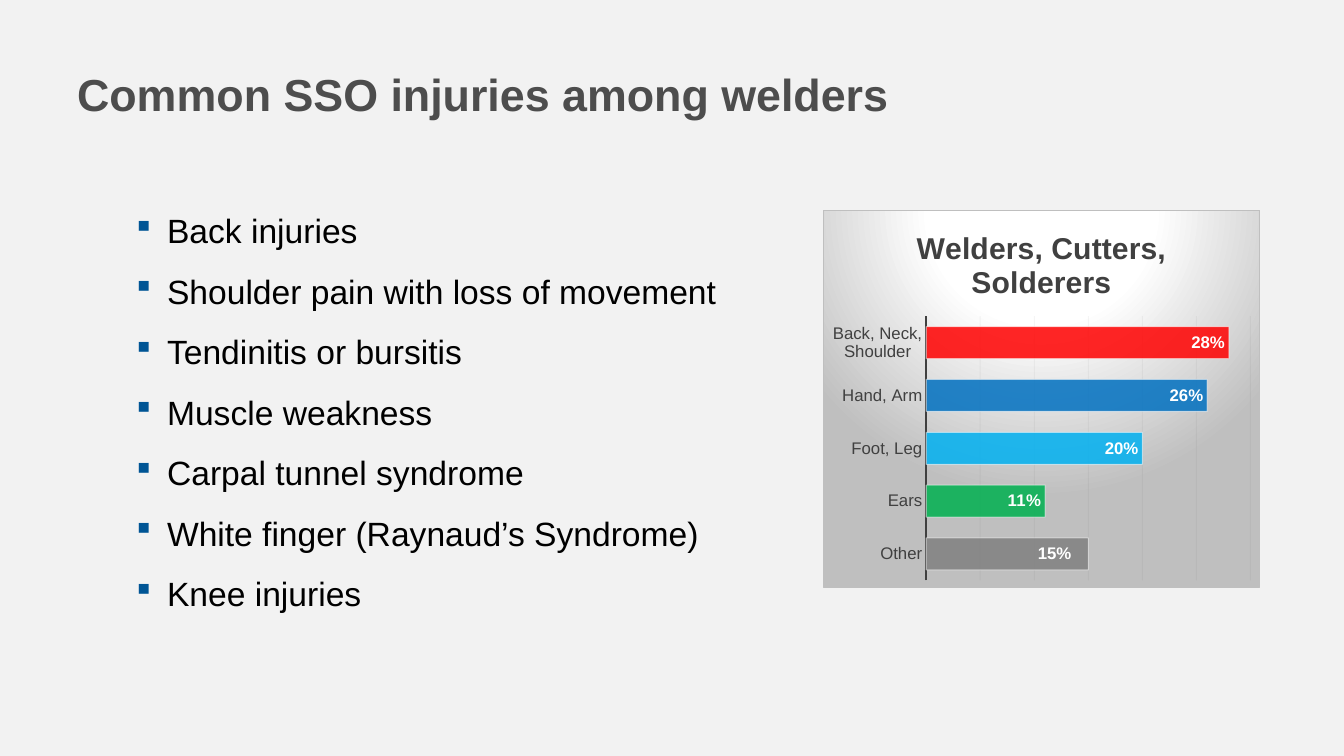
from lxml.etree import SubElement
from pptx import Presentation
from pptx.chart.data import CategoryChartData
from pptx.dml.color import RGBColor
from pptx.enum.chart import XL_CHART_TYPE as ChartType, XL_LABEL_POSITION as LabelPosition
from pptx.enum.chart import XL_TICK_MARK as TickMark
from pptx.enum.shapes import MSO_SHAPE
from pptx.enum.text import MSO_ANCHOR, MSO_AUTO_SIZE, PP_ALIGN
from pptx.oxml import parse_xml
from pptx.oxml.ns import nsdecls, qn
from pptx.util import Emu, Pt

BLACK = RGBColor(0, 0, 0)
WHITE = RGBColor(255, 255, 255)
PAPER = RGBColor(0xF2, 0xF2, 0xF2)
TITLE_GRAY = RGBColor(0x4D, 0x4D, 0x4D)
CHART_GRAY = RGBColor(0x40, 0x40, 0x40)
GRID = RGBColor(0x0D, 0x0D, 0x0D)
BULLET_BLUE = RGBColor(0x00, 0x55, 0x95)

TITLE = "Common SSO injuries among welders"
INJURIES = [
    "Back injuries",
    "Shoulder pain with loss of movement",
    "Tendinitis or bursitis",
    "Muscle weakness",
    "Carpal tunnel syndrome",
    "White finger (Raynaud’s Syndrome)",
    "Knee injuries",
]
CHART_TITLE = "Welders, Cutters, Solderers"
BARS = [
    ("Other", 0.15, RGBColor(0x80, 0x80, 0x80)),
    ("Ears", 0.11, RGBColor(0x00, 0xB0, 0x50)),
    ("Foot, Leg", 0.20, RGBColor(0x00, 0xB0, 0xF0)),
    ("Hand, Arm", 0.26, RGBColor(0x00, 0x70, 0xC0)),
    ("Back, Neck, Shoulder", 0.28, RGBColor(0xFF, 0x00, 0x00)),
]
FONT = "Arial"
SLIDE_BOX = (0, 0, 1344, 756)
TITLE_BOX = (67, 58, 1227, 71)
LIST_BOX = (126, 185, 672, 437)
CHART_BOX = (823, 210, 437, 378)
PLOT_BOX = (926, 316, 325, 265)
LABEL_SHIFT = -12


def px(length):
    return Emu(length * 9072)


def place(shape, box):
    shape.left, shape.top, shape.width, shape.height = map(px, box)


def set_font(font, size, color, bold=False):
    font.name, font.size, font.bold = FONT, Pt(size), bold
    font.color.rgb = color


def set_line(line, color, width):
    line.color.rgb = color
    line.width = Pt(width)


def set_alpha(colors, percent):
    for color in colors:
        SubElement(color, qn("a:alpha"), val=str(percent * 1000))


def manual_layout(**settings):
    entries = "".join(f'<c:{name} val="{value}"/>' for name, value in settings.items())
    return parse_xml(f'<c:layout {nsdecls("c")}><c:manualLayout>{entries}</c:manualLayout></c:layout>')


def add_bullet(paragraph):
    properties = paragraph._p.get_or_add_pPr()
    properties.set("marL", str(px(31)))
    properties.set("indent", str(px(-31)))
    color = SubElement(properties, qn("a:buClr"))
    SubElement(color, qn("a:srgbClr"), val=str(BULLET_BLUE))
    SubElement(properties, qn("a:buFont"), typeface="Wingdings", pitchFamily="2", charset="2")
    SubElement(properties, qn("a:buChar"), char="§")


def add_backdrop(slide):
    backdrop = slide.shapes.add_shape(MSO_SHAPE.RECTANGLE, *map(px, SLIDE_BOX))
    backdrop.shadow.inherit = False
    backdrop.fill.solid()
    backdrop.fill.fore_color.rgb = PAPER
    backdrop.line.fill.background()
    slide.shapes.title.element.addprevious(backdrop.element)


def fill_title(shape):
    place(shape, TITLE_BOX)
    frame = shape.text_frame
    frame.text = TITLE
    frame.vertical_anchor = MSO_ANCHOR.MIDDLE
    paragraph = frame.paragraphs[0]
    paragraph.alignment = PP_ALIGN.LEFT
    set_font(paragraph.font, 32, TITLE_GRAY, True)


def fill_list(shape):
    place(shape, LIST_BOX)
    frame = shape.text_frame
    frame.text = "\n".join(INJURIES)
    frame.auto_size = MSO_AUTO_SIZE.SHAPE_TO_FIT_TEXT
    for paragraph in frame.paragraphs:
        paragraph.line_spacing = 1.5
        paragraph.space_before = Pt(0)
        add_bullet(paragraph)
        set_font(paragraph.font, 24, BLACK)


def add_injury_chart(slide):
    data = CategoryChartData(number_format="0%")
    data.categories = [name for name, _, _ in BARS]
    data.add_series("Series 1", [value for _, value, _ in BARS])
    chart = slide.shapes.add_chart(ChartType.BAR_CLUSTERED, *map(px, CHART_BOX), data).chart
    set_font(chart.font, 10, BLACK)
    chart.has_legend = False
    title = chart.chart_title
    title.text_frame.text = CHART_TITLE
    title.include_in_layout = False
    set_font(title.text_frame.paragraphs[0].font, 21.6, CHART_GRAY, True)

    category_axis = chart.category_axis
    category_axis.major_tick_mark = TickMark.NONE
    set_font(category_axis.tick_labels.font, 12, CHART_GRAY)
    set_line(category_axis.format.line, CHART_GRAY, 1.5)
    value_axis = chart.value_axis
    value_axis.minimum_scale, value_axis.maximum_scale, value_axis.major_unit = 0, 0.3, 0.05
    value_axis.visible = False
    set_line(value_axis.major_gridlines.format.line, GRID, 0.75)

    plot = chart.plots[0]
    plot.gap_width = 65
    plot.vary_by_categories = False
    series = plot.series[0]
    labels = series.data_labels
    labels.show_value = True
    labels.number_format, labels.number_format_is_linked = "0%", False
    labels.position = LabelPosition.INSIDE_END
    set_font(labels.font, 12, WHITE, True)
    for index, (_, _, color) in enumerate(BARS):
        style = series.points[index].format
        style.fill.solid()
        style.fill.fore_color.rgb = color
        set_line(style.line, WHITE, 0.75)
    other_label = series.points[0].data_label
    set_font(other_label.font, 12, WHITE, True)
    other_label.position = LabelPosition.INSIDE_END

    root = chart.element
    for leader_lines in root.xpath(".//c:showLeaderLines"):
        leader_lines.set("val", "0")
    set_alpha(root.xpath(".//c:majorGridlines//a:srgbClr"), 4)
    set_alpha(root.xpath(".//c:dPt/c:spPr/a:solidFill/a:srgbClr"), 85)
    set_alpha(root.xpath(".//c:dPt//a:ln//a:srgbClr"), 50)
    left, top, width, height = CHART_BOX
    shift = manual_layout(x=round(LABEL_SHIFT / width, 2), y=0)
    root.xpath(".//c:dLbl/c:idx")[0].addnext(shift)
    plot_left, plot_top, plot_width, plot_height = PLOT_BOX
    plot_area = root.xpath(".//c:plotArea")[0]
    for layout in plot_area.findall(qn("c:layout")):
        plot_area.remove(layout)
    plot_area.insert(0, manual_layout(
        layoutTarget="inner", xMode="edge", yMode="edge",
        x=(plot_left - left) / width, y=(plot_top - top) / height,
        w=plot_width / width, h=plot_height / height))
    root.find(qn("c:chart")).addnext(parse_xml(
        f'<c:spPr {nsdecls("c", "a")}><a:gradFill><a:gsLst>'
        '<a:gs pos="0"><a:srgbClr val="FFFFFF"/></a:gs>'
        '<a:gs pos="39000"><a:srgbClr val="FFFFFF"/></a:gs>'
        '<a:gs pos="100000"><a:srgbClr val="BFBFBF"/></a:gs></a:gsLst>'
        '<a:path path="circle"><a:fillToRect l="50000" t="-80000" r="50000" b="180000"/></a:path>'
        '</a:gradFill><a:ln w="9525"><a:solidFill><a:srgbClr val="BFBFBF"/></a:solidFill></a:ln></c:spPr>'))


def main():
    presentation = Presentation()
    presentation.slide_width, presentation.slide_height = map(px, SLIDE_BOX[2:])
    slide = presentation.slides.add_slide(presentation.slide_layouts[1])
    add_backdrop(slide)
    fill_title(slide.shapes.title)
    fill_list(slide.placeholders[1])
    add_injury_chart(slide)
    presentation.save("out.pptx")


if __name__ == "__main__":
    main()
